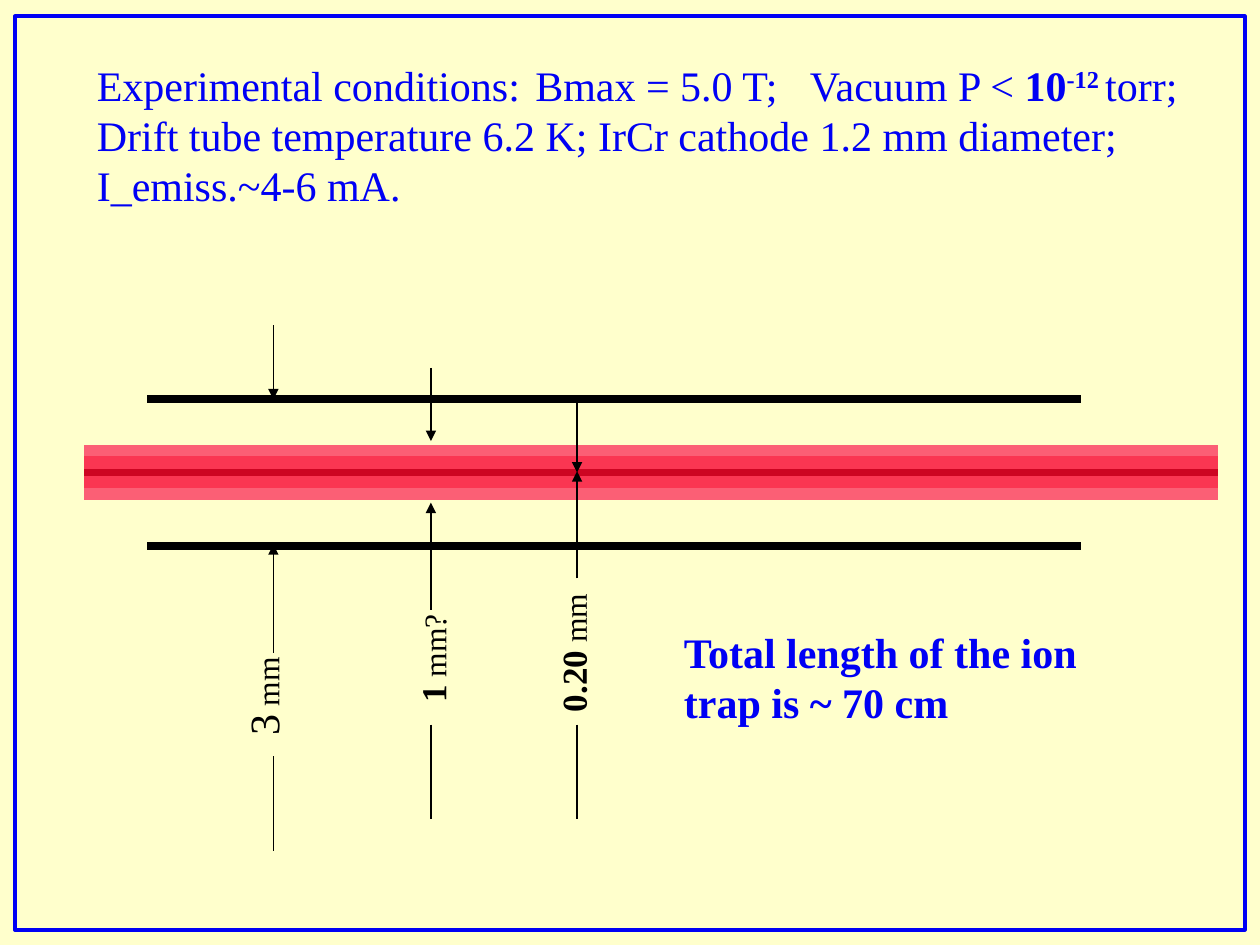
from dataclasses import dataclass

from lxml import etree
from pptx import Presentation
from pptx.dml.color import RGBColor
from pptx.enum.shapes import MSO_CONNECTOR, MSO_SHAPE
from pptx.oxml.ns import qn
from pptx.util import Inches, Pt

STRAIGHT = MSO_CONNECTOR.STRAIGHT
RECTANGLE = MSO_SHAPE.RECTANGLE
FONT = "Times New Roman"
BLUE = "0000F4"
BLACK = "000000"
CORE_RED = "CD0522"
MIDDLE_RED = "FA3652"
OUTER_RED = "FB5F75"


@dataclass(frozen=True)
class Run:
    text: str
    size: float = 24
    bold: bool = False
    baseline: int = 0


@dataclass(frozen=True)
class Band:
    y: float
    left: float
    right: float
    color: str
    width: float


@dataclass(frozen=True)
class Dimension:
    x: float
    upper_start: float
    upper_tip: float
    lower_start: float
    lower_tip: float
    leader_start: float
    label_box: tuple[float, float, float, float]
    label_runs: tuple[Run, ...]
    label_inset: float = 0.1


BANDS = [
    Band(3.75, 0.67, 9.67, CORE_RED, 7),
    Band(3.17, 1.17, 8.58, BLACK, 4.5),
    Band(4.33, 1.17, 8.58, BLACK, 4.5),
    Band(3.58, 0.67, 9.67, OUTER_RED, 7),
    Band(3.67, 0.67, 9.67, MIDDLE_RED, 7),
    Band(3.83, 0.67, 9.67, MIDDLE_RED, 7),
    Band(3.92, 0.67, 9.67, OUTER_RED, 7),
]
LEADER_LENGTH = 0.75
DIMENSIONS = [
    Dimension(2.17, 2.58, 3.17, 5.18, 4.32, 6, (1.42, 5.08, 1.33, 0.5),
              (Run("3"), Run(" mm", 18)), 0.16),
    Dimension(3.42, 2.92, 3.5, 4.84, 3.99, 5.75, (2.97, 4.99, 0.93, 0.44),
              (Run("1", 20, True), Run(" mm?", 18))),
    Dimension(4.58, 3.17, 3.75, 4.59, 3.74, 5.75, (3.96, 4.94, 1.18, 0.44),
              (Run("0.20", 20, True), Run(" mm", 18))),
]
CONDITIONS = [
    Run("Experimental conditions:\tBmax = 5.0 T;\tVacuum P < "),
    Run("10", bold=True),
    Run("-12 ", bold=True, baseline=30),
    Run("torr; Drift tube temperature 6.2 K; IrCr cathode 1.2 mm diameter; "
        "I_emiss.~4-6 mA."),
]


def rgb(color: str) -> RGBColor:
    return RGBColor.from_string(color)


def add_line(slide, start: tuple[float, float], end: tuple[float, float],
             color: str = BLACK, width: float = 0.75, arrow: bool = False) -> None:
    connector = slide.shapes.add_connector(
        STRAIGHT, *(Inches(value) for value in (*start, *end)))
    connector.line.color.rgb = rgb(color)
    connector.line.width = Pt(width)
    if arrow:
        line = connector.line._get_or_add_ln()
        etree.SubElement(line, qn("a:tailEnd"), type="triangle")
    etree.SubElement(connector._element.spPr, qn("a:effectLst"))


def add_text(slide, runs, box: tuple[float, float, float, float], *,
             color: str = BLACK, rotation: float = 0,
             left_inset: float = 0.1, right_inset: float = 0.1,
             tabs: tuple[float, ...] = ()) -> None:
    shape = slide.shapes.add_textbox(*(Inches(value) for value in box))
    shape.rotation = rotation
    frame = shape.text_frame
    frame.word_wrap = True
    frame.margin_left = Inches(left_inset)
    frame.margin_right = Inches(right_inset)
    paragraph = frame.paragraphs[0]
    if tabs:
        properties = paragraph._p.get_or_add_pPr()
        tab_list = etree.SubElement(properties, qn("a:tabLst"))
        for position in tabs:
            etree.SubElement(tab_list, qn("a:tab"), pos=str(Inches(position)), algn="l")
    for item in runs:
        run = paragraph.add_run()
        run.text = item.text
        run.font.name = FONT
        run.font.size = Pt(item.size)
        run.font.bold = item.bold
        run.font.color.rgb = rgb(color)
        if item.baseline:
            run.font._element.set("baseline", str(item.baseline * 1000))


def add_dimension_lines(slide, dimension: Dimension) -> None:
    x = dimension.x
    add_line(slide, (x, dimension.upper_start), (x, dimension.upper_tip), arrow=True)
    add_line(slide, (x, dimension.lower_start), (x, dimension.lower_tip), arrow=True)
    add_line(slide, (x, dimension.leader_start),
             (x, dimension.leader_start + LEADER_LENGTH))


def add_frame(slide) -> None:
    shape = slide.shapes.add_shape(
        RECTANGLE, Inches(0.12), Inches(0.13), Inches(9.76), Inches(7.25))
    shape.shadow.inherit = False
    shape.fill.background()
    shape.line.color.rgb = rgb(BLUE)
    shape.line.width = Pt(2.25)


def main() -> None:
    presentation = Presentation()
    presentation.slide_width = Inches(10)
    presentation.slide_height = Inches(7.5)
    slide = presentation.slides.add_slide(presentation.slide_layouts[6])
    slide.background.fill.solid()
    slide.background.fill.fore_color.rgb = rgb("FFFFCC")

    for band in BANDS:
        add_line(slide, (band.left, band.y), (band.right, band.y), band.color, band.width)
    for dimension in DIMENSIONS:
        add_dimension_lines(slide, dimension)
    for dimension in DIMENSIONS:
        add_text(slide, dimension.label_runs, dimension.label_box, rotation=270,
                 left_inset=dimension.label_inset, right_inset=0)

    add_text(slide, CONDITIONS, (0.67, 0.42, 9.08, 1.77), color=BLUE, tabs=(3.48, 5.66))
    add_text(slide, [Run("Total length of the ion trap is ~ 70 cm", bold=True)],
             (5.33, 4.92, 3.58, 0.91), color=BLUE)
    add_frame(slide)
    presentation.save("out.pptx")


if __name__ == "__main__":
    main()
